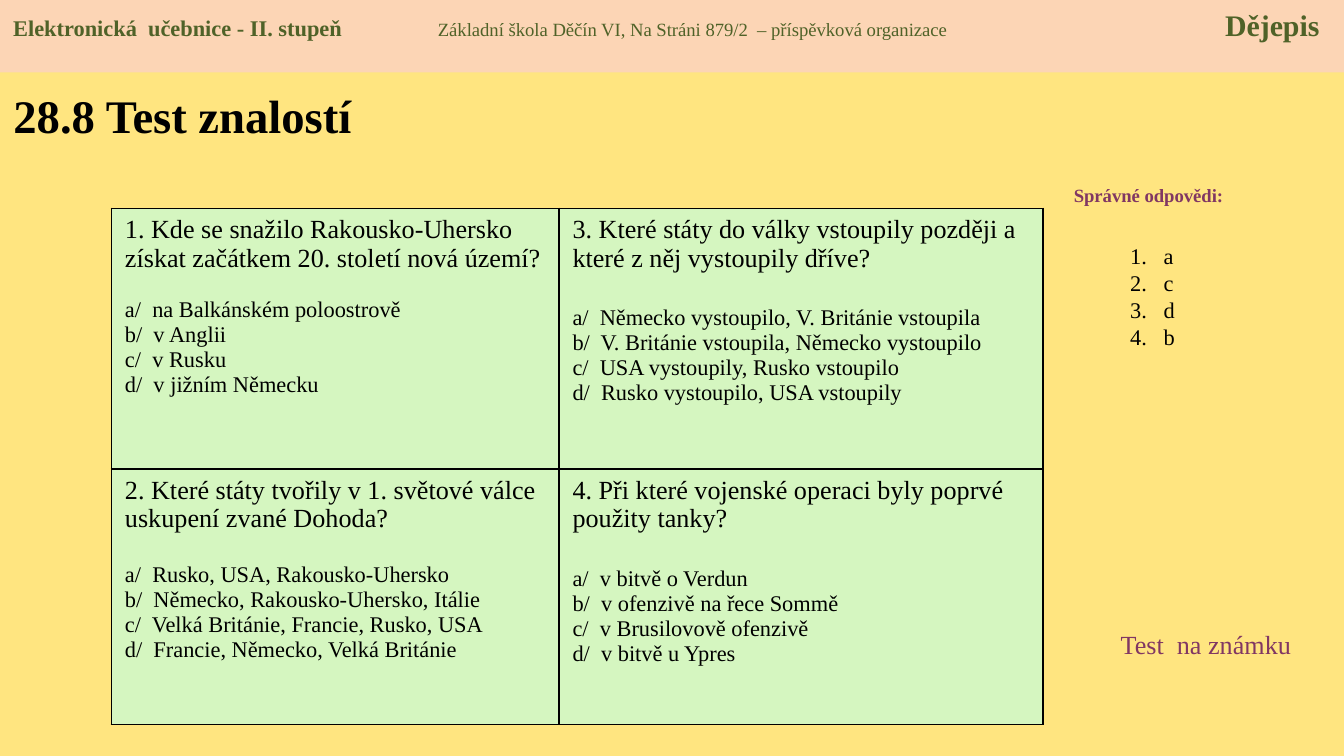
from lxml import etree
from pptx import Presentation
from pptx.dml.color import RGBColor
from pptx.enum.shapes import MSO_SHAPE
from pptx.enum.text import MSO_ANCHOR, PP_ALIGN
from pptx.oxml.ns import qn
from pptx.util import Inches, Pt

RECTANGLE = MSO_SHAPE.RECTANGLE
TOP, MIDDLE = MSO_ANCHOR.TOP, MSO_ANCHOR.MIDDLE
LEFT, CENTER = PP_ALIGN.LEFT, PP_ALIGN.CENTER

FONT = "Times New Roman"
BLACK = RGBColor(0x00, 0x00, 0x00)
YELLOW = RGBColor(0xFF, 0xE5, 0x80)
PEACH = RGBColor(0xFC, 0xD5, 0xB5)
OLIVE = RGBColor(0x4F, 0x62, 0x28)
PLUM = RGBColor(0x81, 0x37, 0x63)
MINT = RGBColor(0xD5, 0xF6, 0xC0)

COLUMN_WIDTHS = [3.33, 3.6]
ROW_HEIGHTS = [1.94, 1.9]
# Each cell: question, gap after it in points, answers
QUESTIONS = [
    [
        ("1. Kde se snažilo Rakousko-Uhersko získat začátkem 20. století nová území?", 13.3,
         ["a/  na Balkánském poloostrově", "b/  v Anglii", "c/  v Rusku", "d/  v jižním Německu"]),
        ("3. Které státy do války vstoupily později a které z něj vystoupily dříve?", 17.7,
         ["a/  Německo vystoupilo, V. Británie vstoupila",
          "b/  V. Británie vstoupila, Německo vystoupilo",
          "c/  USA vystoupily, Rusko vstoupilo", "d/  Rusko vystoupilo, USA vstoupily"]),
    ],
    [
        ("2. Které státy tvořily v 1. světové válce uskupení zvané Dohoda?", 15.5,
         ["a/  Rusko, USA, Rakousko-Uhersko", "b/  Německo, Rakousko-Uhersko, Itálie",
          "c/  Velká Británie, Francie, Rusko, USA", "d/  Francie, Německo, Velká Británie"]),
        ("4. Při které vojenské operaci byly poprvé použity tanky?", 17.7,
         ["a/  v bitvě o Verdun", "b/  v ofenzivě na řece Sommě",
          "c/  v Brusilovově ofenzivě", "d/  v bitvě u Ypres"]),
    ],
]


def style(font, size, color=BLACK, bold=False):
    font.name, font.size, font.bold = FONT, Pt(size), bold
    font.color.rgb = color


def fill_paragraphs(frame, lines, size, color=BLACK, bold=False):
    frame.text = "\n".join(lines)
    for para in frame.paragraphs:
        style(para.font, size, color, bold)
    return frame.paragraphs


def add_text(page, left, top, width, height, lines, size, color=BLACK, bold=False):
    box = page.shapes.add_textbox(Inches(left), Inches(top), Inches(width), Inches(height))
    box.text_frame.word_wrap = True
    fill_paragraphs(box.text_frame, lines, size, color, bold)
    return box.text_frame


def add_banner(page, left, top, width, height):
    banner = page.shapes.add_shape(
        RECTANGLE, Inches(left), Inches(top), Inches(width), Inches(height))
    banner.shadow.inherit = False
    banner.fill.solid()
    banner.fill.fore_color.rgb = PEACH
    banner.line.fill.background()
    frame = banner.text_frame
    frame.vertical_anchor = TOP
    para = frame.paragraphs[0]
    para.alignment = LEFT
    for text, size, bold in [
        ("Elektronická  učebnice - II. stupeň\t", 12, True),
        ("Základní škola Děčín VI, Na Stráni 879/2  – příspěvková organizace\t", 10, False),
        ("Dějepis", 16, True),
    ]:
        span = para.add_run()
        span.text = text
        style(span.font, size, OLIVE, bold)
    # Tab stops hold the school name and the subject in place
    tabs = etree.SubElement(para._p.get_or_add_pPr(), qn("a:tabLst"))
    for position, kind in [(3.16, "l"), (width - 0.28, "r")]:
        etree.SubElement(tabs, qn("a:tab"), pos=str(Inches(position)), algn=kind)


def add_title(page, left, top, width, height):
    title = page.shapes.title
    title.left, title.top = Inches(left), Inches(top)
    title.width, title.height = Inches(width), Inches(height)
    title.text_frame.vertical_anchor = MIDDLE
    para = fill_paragraphs(title.text_frame, ["28.8 Test znalostí"], 25, bold=True)[0]
    para.alignment = LEFT


def set_borders(cell):
    properties = cell._tc.get_or_add_tcPr()
    for index, side in enumerate(["lnL", "lnR", "lnT", "lnB"]):
        line = etree.Element(qn("a:" + side), w=str(Pt(1)))
        solid = etree.SubElement(line, qn("a:solidFill"))
        etree.SubElement(solid, qn("a:srgbClr"), val=str(BLACK))
        properties.insert(index, line)


def add_questions(page, left, top):
    table = page.shapes.add_table(
        len(ROW_HEIGHTS), len(COLUMN_WIDTHS), Inches(left), Inches(top),
        Inches(sum(COLUMN_WIDTHS)), Inches(sum(ROW_HEIGHTS))).table
    table.first_row = table.horz_banding = False
    for column, width in zip(table.columns, COLUMN_WIDTHS):
        column.width = Inches(width)
    for row, height, questions in zip(table.rows, ROW_HEIGHTS, QUESTIONS):
        row.height = Inches(height)
        for cell, (question, gap, answers) in zip(row.cells, questions):
            cell.fill.solid()
            cell.fill.fore_color.rgb = MINT
            set_borders(cell)
            heading = fill_paragraphs(cell.text_frame, [question, *answers], 12)[0]
            heading.font.size = Pt(14)
            heading.space_after = Pt(gap)


def add_answer_key(page, left, top):
    heading = add_text(page, left, top, 1.57, 0.27, ["Správné odpovědi:"], 10, PLUM, True)
    heading.paragraphs[0].alignment = CENTER
    # Numbered answers
    answers = add_text(page, left + 0.55, top + 0.23, 0.55, 1.3, ["a", "c", "d", "b"], 12)
    answers.margin_top = Inches(0.25)
    for para in answers.paragraphs:
        para.line_spacing = Pt(14.5)
        properties = para._p.get_or_add_pPr()
        properties.set("marL", str(Inches(0.25)))
        properties.set("indent", str(-Inches(0.25)))
        number = etree.Element(qn("a:buAutoNum"), type="arabicPeriod")
        properties.find(qn("a:lnSpc")).addnext(number)
    # Note about the graded test
    add_text(page, left + 0.48, top + 3.31, 1.57, 0.34, ["Test  na známku"], 14, PLUM)


def main():
    deck = Presentation()
    # Widescreen page, 16:9
    deck.slide_width = Inches(10)
    deck.slide_height = deck.slide_width * 9 // 16
    page = deck.slides.add_slide(deck.slide_layouts[5])
    page.background.fill.solid()
    page.background.fill.fore_color.rgb = YELLOW

    add_title(page, 0, 0.53, 3.9, 0.65)
    add_questions(page, 0.83, 1.55)
    add_answer_key(page, 7.76, 1.32)
    add_banner(page, 0, 0, 10, 0.54)
    deck.save("out.pptx")


if __name__ == "__main__":
    main()
